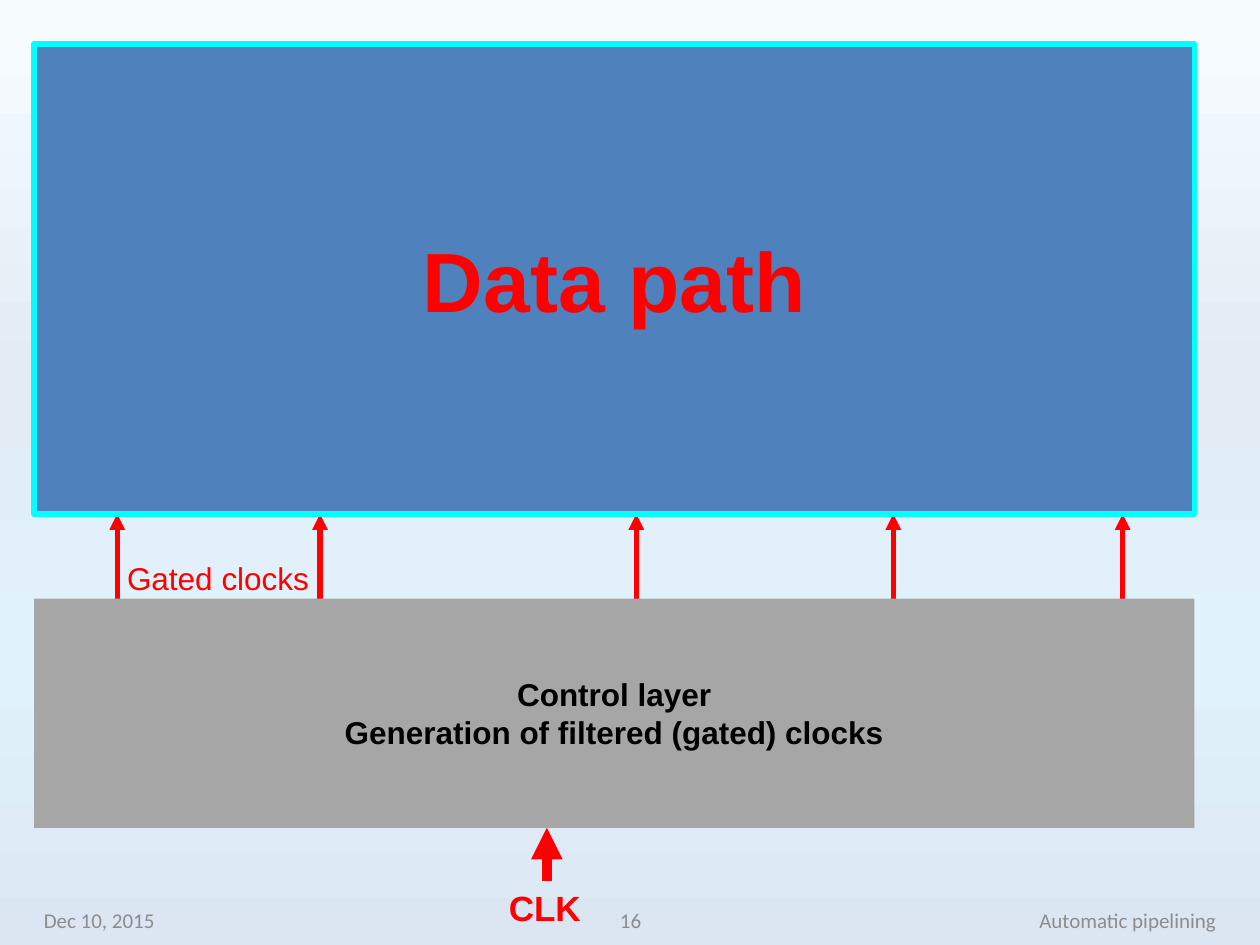
from copy import deepcopy

from pptx import Presentation
from pptx.dml.color import RGBColor
from pptx.enum.shapes import MSO_CONNECTOR as Connector, MSO_SHAPE as Shape
from pptx.enum.text import MSO_ANCHOR as Anchor, PP_ALIGN as Align
from pptx.oxml.ns import qn
from pptx.oxml.xmlchemy import OxmlElement
from pptx.util import Inches, Pt

COLORS = {
    "signal": "FF0000",
    "data": "4F81BD",
    "data_border": "00FFFF",
    "control": "A6A6A6",
    "control_text": "000000",
    "footer": "8C8C8C",
}
BACKGROUND_STOPS = [(0, "F7FDFF"), (40, "E3EBF5"), (70, "E0F3FC"), (100, "DCE6F2")]

# Shared edges, in inches
BLOCK_LEFT, BLOCK_WIDTH = 0.27, 9.21
DATA_TOP, DATA_BOTTOM = 0.35, 4.08
CONTROL_TOP, CONTROL_BOTTOM = 4.75, 6.57
CLOCK_START = 5.24
CLOCK_COLUMNS = [0.93, 2.54, 5.05, 7.09, 8.91]
CLK_X, CLK_TOP = 4.34, 6.99
FOOTER_TOP, FOOTER_HEIGHT = 7.1, 0.4


def rgb(name):
    return RGBColor.from_string(COLORS[name])


def paint_background(slide):
    """Vertical gradient with as many stops as the list holds."""
    fill = slide.background.fill
    fill.gradient()
    fill.gradient_angle = 270
    stop_list = slide.element.find(".//" + qn("a:gsLst"))
    template = deepcopy(stop_list[0])
    for stop in list(stop_list):
        stop_list.remove(stop)
    for _ in BACKGROUND_STOPS:
        stop_list.append(deepcopy(template))
    for stop, (percent, color) in zip(fill.gradient_stops, BACKGROUND_STOPS):
        stop.position = percent / 100
        stop.color.rgb = RGBColor.from_string(color)


def write(shape, lines, size, color, bold=False, align=Align.LEFT,
          font="Arial", anchor=Anchor.TOP, wrap=False):
    frame = shape.text_frame
    frame.text = "\n".join(lines)
    frame.word_wrap = wrap
    frame.vertical_anchor = anchor
    for paragraph in frame.paragraphs:
        paragraph.alignment = align
        paragraph.font.name = font
        paragraph.font.size = Pt(size)
        paragraph.font.bold = bold
        paragraph.font.color.rgb = rgb(color)


def add_block(slide, top, bottom, fill, lines, size, color, border=None):
    block = slide.shapes.add_shape(
        Shape.RECTANGLE, Inches(BLOCK_LEFT), Inches(top),
        Inches(BLOCK_WIDTH), Inches(bottom - top))
    block.shadow.inherit = False
    block.fill.solid()
    block.fill.fore_color.rgb = rgb(fill)
    if border:
        block.line.color.rgb = rgb(border)
        block.line.width = Pt(3)
    else:
        block.line.fill.background()
    write(block, lines, size, color, bold=True, align=Align.CENTER, anchor=Anchor.MIDDLE)


def add_label(slide, left, top, width, height, text, size, color, **style):
    box = slide.shapes.add_textbox(*map(Inches, (left, top, width, height)))
    write(box, [text], size, color, **style)


def add_up_arrow(slide, x, start, end, width):
    arrow = slide.shapes.add_connector(
        Connector.STRAIGHT, Inches(x), Inches(start), Inches(x), Inches(end))
    arrow.line.color.rgb = rgb("signal")
    arrow.line.width = Pt(width)
    head = OxmlElement("a:tailEnd")
    head.set("type", "triangle")
    arrow.line._get_or_add_ln().append(head)
    arrow._element.spPr.append(OxmlElement("a:effectLst"))


def add_footer(slide, left, width, text, align):
    add_label(slide, left, FOOTER_TOP, width, FOOTER_HEIGHT, text, 12, "footer",
              align=align, font="Calibri", anchor=Anchor.MIDDLE, wrap=True)


def main():
    presentation = Presentation()
    presentation.slide_width, presentation.slide_height = Inches(10), Inches(7.5)
    slide = presentation.slides.add_slide(presentation.slide_layouts[6])
    paint_background(slide)

    # Clock arrows, whose ends lie under the blocks
    for x in CLOCK_COLUMNS:
        add_up_arrow(slide, x, CLOCK_START, DATA_BOTTOM, 3)
    add_up_arrow(slide, CLK_X, CLK_TOP, CONTROL_BOTTOM, 6)
    add_label(slide, 3.94, CLK_TOP, 0.77, 0.43, "CLK", 20, "signal", bold=True)

    # Control layer and data path
    add_block(slide, CONTROL_TOP, CONTROL_BOTTOM, "control",
              ["Control layer", "Generation of filtered (gated) clocks"],
              18, "control_text")
    add_label(slide, 0.91, 4.39, 1.65, 0.4, "Gated clocks", 18, "signal")
    add_block(slide, DATA_TOP, DATA_BOTTOM, "data", ["Data path"],
              48, "signal", border="data_border")

    # Footer
    add_footer(slide, 0.25, 2.33, "Dec 10, 2015", Align.LEFT)
    add_footer(slide, 3.42, 3.17, "16", Align.CENTER)
    add_footer(slide, 7.42, 2.33, "Automatic pipelining", Align.RIGHT)

    presentation.save("out.pptx")


if __name__ == "__main__":
    main()
